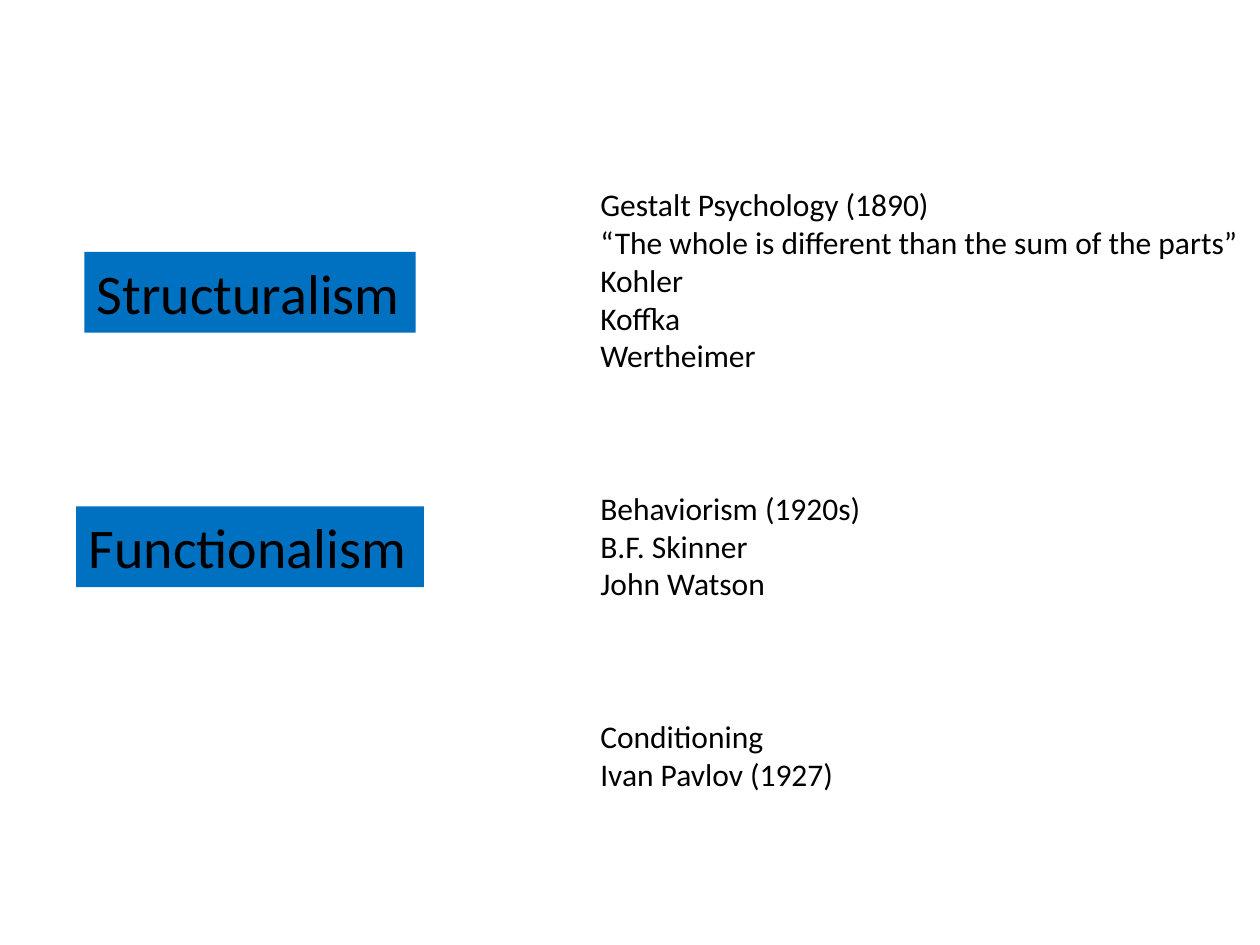
import pptx
import pptx.util
import pptx.dml.color
import pptx.enum.shapes
import pptx.enum.text

Pt = pptx.util.Pt

THEME = {
    "font": "Calibri",
    "text": pptx.dml.color.RGBColor(0, 0, 0),
    "school_fill": pptx.dml.color.RGBColor(0x00, 0x70, 0xC0),
    "school_size": 32,
    "movement_size": 18,
}

MOVEMENTS_LEFT = 336
MOVEMENTS = [
    (102.24, 383.76, 116.64, [
        "Gestalt Psychology (1890)",
        "“The whole is different than the sum of the parts”",
        "Kohler",
        "Koffka",
        "Wertheimer",
    ]),
    (275.76, 164.88, 72.72, ["Behaviorism (1920s)", "B.F. Skinner", "John Watson"]),
    (406.08, 149.04, 51.12, ["Conditioning", "Ivan Pavlov (1927)"]),
]

SCHOOLS_CENTER = 142.92
SCHOOL_HEIGHT = 46.08
SCHOOLS = [
    (144, 189.36, "Structuralism"),
    (289.44, 198.72, "Functionalism"),
]

FRAME_FORMAT = {
    "word_wrap": False,
    "auto_size": pptx.enum.text.MSO_AUTO_SIZE.SHAPE_TO_FIT_TEXT,
    "vertical_anchor": pptx.enum.text.MSO_ANCHOR.TOP,
}


def write_text(shape, lines, size):
    frame = shape.text_frame
    frame.text = "\n".join(lines)
    for name, value in FRAME_FORMAT.items():
        setattr(frame, name, value)
    for paragraph in frame.paragraphs:
        paragraph.alignment = pptx.enum.text.PP_ALIGN.LEFT
        for name, value in {"name": THEME["font"], "size": Pt(size)}.items():
            setattr(paragraph.font, name, value)
        paragraph.font.color.rgb = THEME["text"]


def add_movement(slide, top, width, height, lines):
    shape = slide.shapes.add_textbox(Pt(MOVEMENTS_LEFT), Pt(top), Pt(width), Pt(height))
    write_text(shape, lines, THEME["movement_size"])


def add_school(slide, top, width, name):
    shape = slide.shapes.add_shape(
        pptx.enum.shapes.MSO_SHAPE.RECTANGLE,
        Pt(SCHOOLS_CENTER - width / 2), Pt(top), Pt(width), Pt(SCHOOL_HEIGHT),
    )
    shape.shadow.inherit = False
    shape.fill.solid()
    shape.fill.fore_color.rgb = THEME["school_fill"]
    shape.line.fill.background()
    write_text(shape, [name], THEME["school_size"])


def main():
    presentation = pptx.Presentation()
    presentation.slide_width = Pt(720)
    presentation.slide_height = Pt(540)
    slide = presentation.slides.add_slide(presentation.slide_layouts[6])
    for movement in MOVEMENTS:
        add_movement(slide, *movement)
    for school in SCHOOLS:
        add_school(slide, *school)
    presentation.save("out.pptx")


if __name__ == "__main__":
    main()
